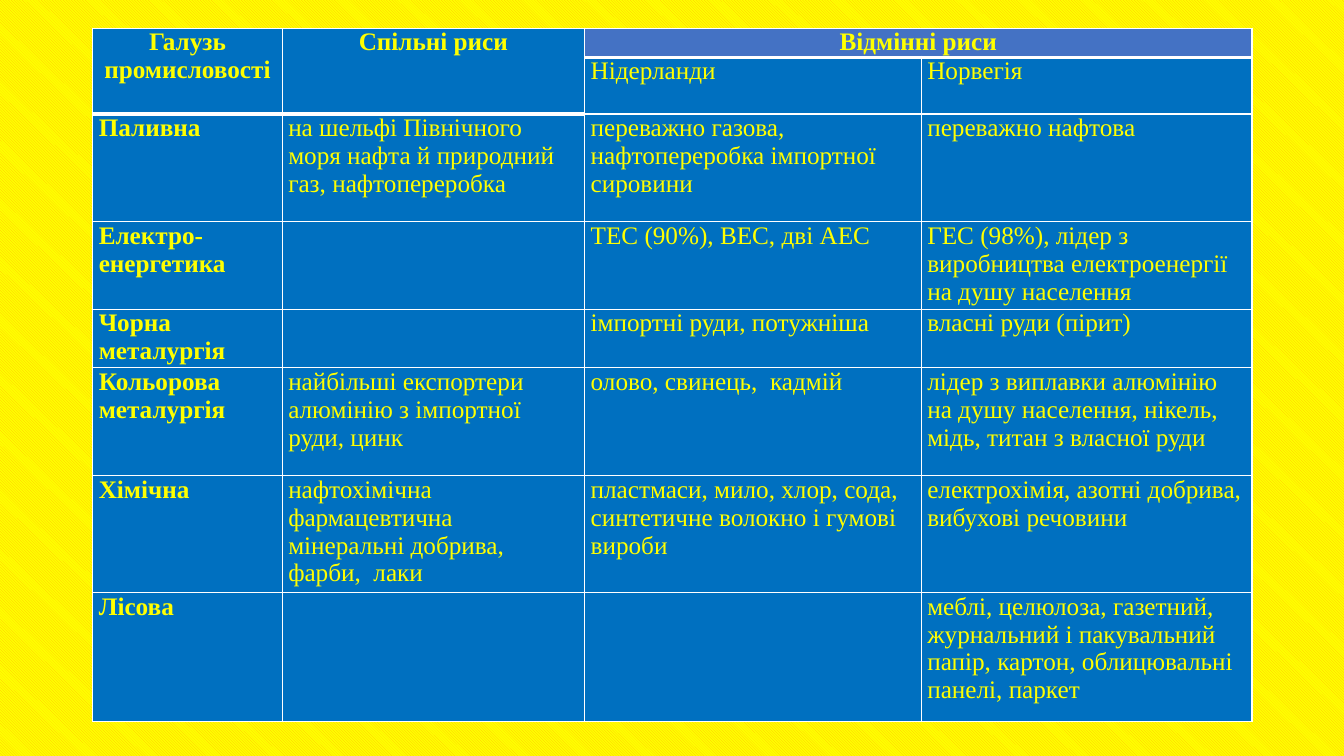
from dataclasses import dataclass

import lxml.etree
import pptx
import pptx.dml.color
import pptx.enum.dml
import pptx.enum.text
import pptx.oxml.ns
import pptx.table
import pptx.util

COLOURS = {
    "yellow": "FFFF00",
    "amber": "FFC000",
    "blue": "0070C0",
    "indigo": "4472C4",
    "white": "FFFFFF",
}
FONT = "Times New Roman"
SLIDE_WIDTH = pptx.util.Inches(13.33)
SLIDE_HEIGHT = pptx.util.Inches(7.5)

# Percent of the slide's width and height
TABLE_LEFT, TABLE_TOP = 6.9, 3.73
COLUMN_SHARES = (14.1, 22.5, 25.05, 24.6)
ROW_SHARES = (3.87, 7.47, 14.27, 11.6, 7.73, 14.27, 15.47, 17.07)


@dataclass(frozen=True)
class Heading:
    text: str
    column: int
    last_row: int
    last_column: int
    fill: str


@dataclass(frozen=True)
class Industry:
    name: str
    common: str
    netherlands: str
    norway: str


HEADINGS = (
    Heading("Галузь промисловості", 0, 1, 0, "blue"),
    Heading("Спільні риси", 1, 1, 1, "blue"),
    Heading("Відмінні риси", 2, 0, 3, "indigo"),
)
COUNTRIES = Industry("", "", "Нідерланди", "Норвегія")
INDUSTRIES = (
    Industry("Паливна",
             "на шельфі Північного моря нафта й природний газ, нафтопереробка",
             "переважно газова, нафтопереробка імпортної сировини",
             "переважно нафтова"),
    Industry("Електро-енергетика", "",
             "ТЕС (90%), ВЕС, дві АЕС",
             "ГЕС (98%), лідер з виробництва електроенергії на душу населення"),
    Industry("Чорна металургія", "",
             "імпортні руди, потужніша",
             "власні руди (пірит)"),
    Industry("Кольорова металургія",
             "найбільші експортери алюмінію з імпортної руди, цинк",
             "олово, свинець,  кадмій",
             "лідер з виплавки алюмінію на душу населення, нікель, мідь, "
             "титан з власної руди"),
    Industry("Хімічна",
             "нафтохімічна\nфармацевтична\nмінеральні добрива, фарби,  лаки",
             "пластмаси, мило, хлор, сода, синтетичне волокно і гумові вироби",
             "електрохімія, азотні добрива, вибухові речовини"),
    Industry("Лісова", "", "",
             "меблі, целюлоза, газетний, журнальний і пакувальний папір, "
             "картон, облицювальні панелі, паркет"),
)


def colour(name: str) -> pptx.dml.color.RGBColor:
    return pptx.dml.color.RGBColor.from_string(COLOURS[name])


def across(percent: float) -> int:
    return round(SLIDE_WIDTH * percent / 100)


def down(percent: float) -> int:
    return round(SLIDE_HEIGHT * percent / 100)


def add_borders(cell: pptx.table._Cell, top: float, bottom: float) -> None:
    properties = cell._tc.get_or_add_tcPr()
    for edge, weight in (("L", 1), ("R", 1), ("T", top), ("B", bottom)):
        line = lxml.etree.SubElement(
            properties, pptx.oxml.ns.qn(f"a:ln{edge}"), w=str(pptx.util.Pt(weight)))
        fill = lxml.etree.SubElement(line, pptx.oxml.ns.qn("a:solidFill"))
        lxml.etree.SubElement(
            fill, pptx.oxml.ns.qn("a:srgbClr"), val=COLOURS["white"])


def format_cell(cell: pptx.table._Cell, fill: str, top: float, bottom: float) -> None:
    add_borders(cell, top, bottom)
    cell.fill.solid()
    cell.fill.fore_color.rgb = colour(fill)
    cell.margin_left = cell.margin_right = pptx.util.Inches(0.06)
    cell.margin_top = cell.margin_bottom = 0


def write(cell: pptx.table._Cell, text: str, bold: bool, centred: bool = False) -> None:
    """Put each line of the text into a paragraph of its own."""
    for index, words in enumerate(text.split("\n")):
        frame = cell.text_frame
        para = frame.add_paragraph() if index else frame.paragraphs[0]
        if centred:
            para.alignment = pptx.enum.text.PP_ALIGN.CENTER
        if not words:
            para.font.size = pptx.util.Pt(18)
            continue
        span = para.add_run()
        span.text = words
        span.font.name = FONT
        span.font.size = pptx.util.Pt(18)
        span.font.bold = bold
        span.font.color.rgb = colour("yellow")


def heading_bottom(row: int, column: int) -> bool:
    """Tell whether a heading ends at the foot of this cell."""
    return any(heading.last_row == row
               and heading.column <= column <= heading.last_column
               for heading in HEADINGS)


def fill_table(table: pptx.table.Table) -> None:
    for column, share in zip(table.columns, COLUMN_SHARES):
        column.width = across(share)
    for row, share in zip(table.rows, ROW_SHARES):
        row.height = down(share)
    for row in range(len(ROW_SHARES)):
        for column in range(len(COLUMN_SHARES)):
            format_cell(table.cell(row, column), "blue",
                        3 if heading_bottom(row - 1, column) else 1,
                        3 if heading_bottom(row, column) else 1)
    for heading in HEADINGS:
        cell = table.cell(0, heading.column)
        cell.merge(table.cell(heading.last_row, heading.last_column))
        cell.fill.fore_color.rgb = colour(heading.fill)
        write(cell, heading.text, bold=True, centred=True)
    for row, industry in enumerate((COUNTRIES, *INDUSTRIES), start=1):
        texts = (industry.name, industry.common,
                 industry.netherlands, industry.norway)
        for column, text in enumerate(texts):
            cell = table.cell(row, column)
            if not cell.is_spanned:
                write(cell, text, bold=column == 0)


def main() -> None:
    deck = pptx.Presentation()
    deck.slide_width, deck.slide_height = SLIDE_WIDTH, SLIDE_HEIGHT
    page = deck.slides.add_slide(deck.slide_layouts.get_by_name("Blank"))
    backdrop = page.background.fill
    backdrop.patterned()
    backdrop.pattern = pptx.enum.dml.MSO_PATTERN.LIGHT_DOWNWARD_DIAGONAL
    backdrop.fore_color.rgb = colour("amber")
    backdrop.back_color.rgb = colour("yellow")
    frame = page.shapes.add_table(
        len(ROW_SHARES), len(COLUMN_SHARES), across(TABLE_LEFT), down(TABLE_TOP),
        across(sum(COLUMN_SHARES)), down(sum(ROW_SHARES)))
    fill_table(frame.table)
    deck.save("out.pptx")


if __name__ == "__main__":
    main()
